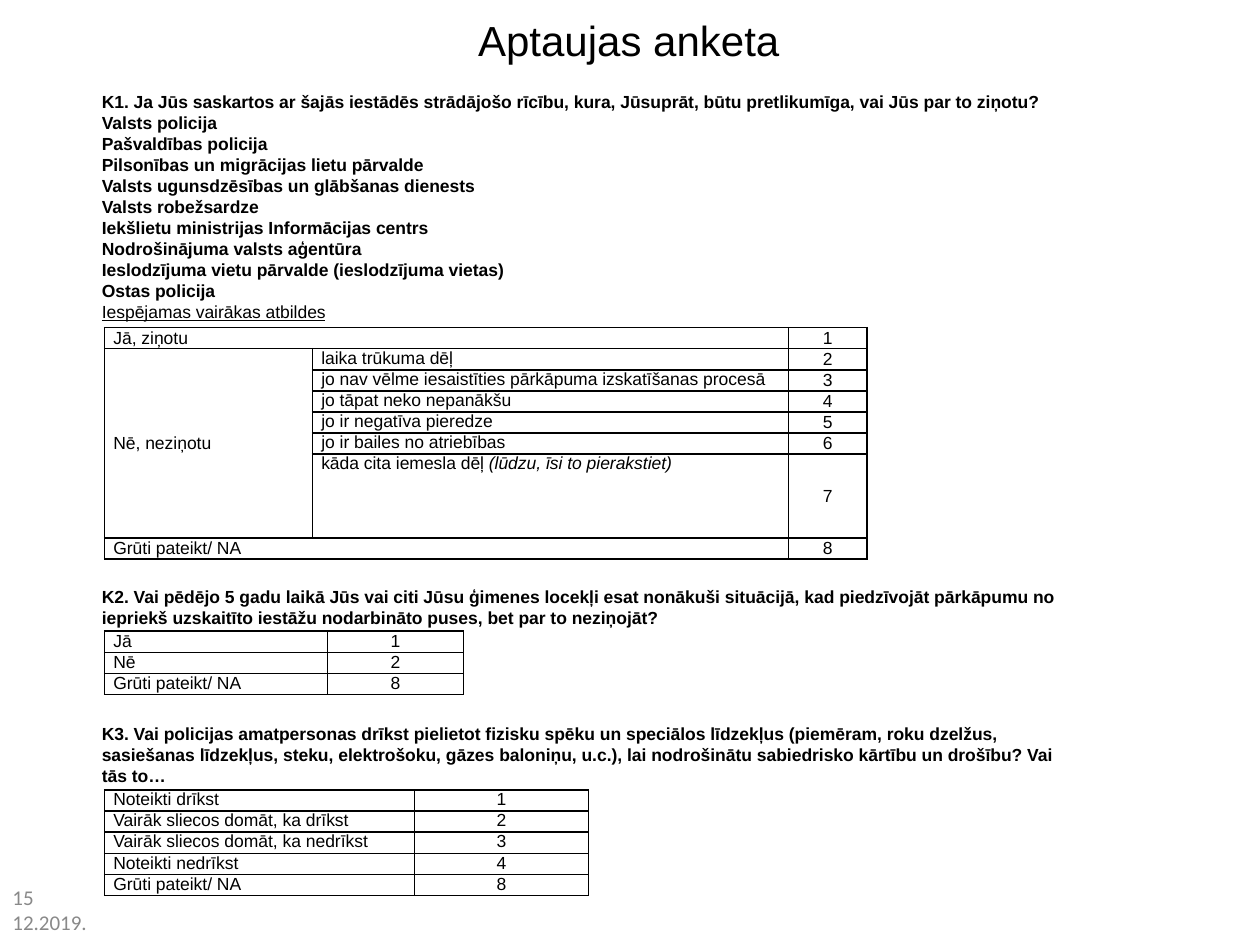
from lxml import etree
from pptx import Presentation
from pptx.enum import text as t
from pptx.dml.color import RGBColor
from pptx.oxml import ns
from pptx.util import Inches, Pt

COLORS = {"text": "000000", "footer": "898989", "border": "000000"}
ROW_HEIGHT = 1 / 6
TABLE_LEFT = 0.83

TITLE = "Aptaujas anketa"
FOOTER = ["15", "12.2019."]
INSTITUTIONS = [
    "Valsts policija",
    "Pašvaldības policija",
    "Pilsonības un migrācijas lietu pārvalde",
    "Valsts ugunsdzēsības un glābšanas dienests",
    "Valsts robežsardze",
    "Iekšlietu ministrijas Informācijas centrs",
    "Nodrošinājuma valsts aģentūra",
    "Ieslodzījuma vietu pārvalde (ieslodzījuma vietas)",
    "Ostas policija",
]
ANSWER_NOTE = ("Iespējamas vairākas atbildes", {"bold": False, "underline": True})

# (left, top, width, height), paragraphs
QUESTIONS = [
    ((0.71, 0.67, 8.03, 1.95), [
        "K1. Ja Jūs saskartos ar šajās iestādēs strādājošo rīcību, kura, Jūsuprāt, "
        "būtu pretlikumīga, vai Jūs par to ziņotu?", *INSTITUTIONS, [ANSWER_NOTE]]),
    ((0.71, 4.6, 8.03, 0.44), [
        "K2. Vai pēdējo 5 gadu laikā Jūs vai citi Jūsu ģimenes locekļi esat nonākuši "
        "situācijā, kad piedzīvojāt pārkāpumu no iepriekš uzskaitīto iestāžu "
        "nodarbināto puses, bet par to neziņojāt?"]),
    ((0.71, 5.69, 7.97, 0.61), [
        "K3. Vai policijas amatpersonas drīkst pielietot fizisku spēku un speciālos "
        "līdzekļus (piemēram, roku dzelžus, sasiešanas līdzekļus, steku, elektrošoku, "
        "gāzes baloniņu, u.c.), lai nodrošinātu sabiedrisko kārtību un drošību? "
        "Vai tās to…"]),
]

OTHER_REASON = [("kāda cita iemesla dēļ ", {}),
                ("(lūdzu, īsi to pierakstiet)", {"italic": True})]
REPORT_ROWS = [
    ("Jā, ziņotu", "", "1"),
    ("Nē, neziņotu", "laika trūkuma dēļ", "2"),
    ("", "jo nav vēlme iesaistīties pārkāpuma izskatīšanas procesā", "3"),
    ("", "jo tāpat neko nepanākšu", "4"),
    ("", "jo ir negatīva pieredze", "5"),
    ("", "jo ir bailes no atriebības", "6"),
    ("", OTHER_REASON, "7"),
    ("Grūti pateikt/ NA", "", "8"),
]
REPORT_MERGES = [((0, 0), (0, 1)), ((1, 0), (6, 0)), ((7, 0), (7, 1))]
EXPERIENCE_ROWS = [("Jā", "1"), ("Nē", "2"), ("Grūti pateikt/ NA", "8")]
FORCE_ROWS = [
    ("Noteikti drīkst", "1"),
    ("Vairāk sliecos domāt, ka drīkst", "2"),
    ("Vairāk sliecos domāt, ka nedrīkst", "3"),
    ("Noteikti nedrīkst", "4"),
    ("Grūti pateikt/ NA", "8"),
]


def write_text(frame, paragraphs, size=10, font="Arial", color="text", bold=False,
               align=t.PP_ALIGN.LEFT):
    """Fill a frame; a paragraph is a string or a list of (text, format) runs."""
    for index, content in enumerate(paragraphs):
        paragraph = frame.paragraphs[0] if index == 0 else frame.add_paragraph()
        paragraph.alignment = align
        for words, style in [(content, {})] if isinstance(content, str) else content:
            run = paragraph.add_run()
            run.text = words
            run.font.name = font
            run.font.size = Pt(size)
            run.font.color.rgb = RGBColor.from_string(COLORS[color])
            run.font.bold = style.get("bold", bold)
            run.font.italic = style.get("italic", False)
            run.font.underline = style.get("underline", False)


def add_text(slide, box, paragraphs, anchor=t.MSO_ANCHOR.TOP, **style):
    frame = slide.shapes.add_textbox(*map(Inches, box)).text_frame
    frame.word_wrap = True
    frame.vertical_anchor = anchor
    write_text(frame, paragraphs, **style)


def add_borders(cell):
    properties = cell._tc.get_or_add_tcPr()
    for index, side in enumerate(("lnL", "lnR", "lnT", "lnB")):
        line = etree.Element(ns.qn("a:" + side), w=str(Pt(1)))
        fill = etree.SubElement(line, ns.qn("a:solidFill"))
        etree.SubElement(fill, ns.qn("a:srgbClr"), val=COLORS["border"])
        properties.insert(index, line)


def add_answers(slide, top, widths, rows, merges=(), middle_columns=(), tall_rows=None):
    """Add an answer table; tall_rows maps a row to its height in text lines."""
    heights = [ROW_HEIGHT * (tall_rows or {}).get(row, 1) for row in range(len(rows))]
    table = slide.shapes.add_table(
        len(rows), len(widths), Inches(TABLE_LEFT), Inches(top),
        Inches(sum(widths)), Inches(sum(heights))).table
    table.first_row = table.horz_banding = False
    for column, width in zip(table.columns, widths):
        column.width = Inches(width)
    for row, height in zip(table.rows, heights):
        row.height = Inches(height)
    for row, values in enumerate(rows):
        for column, value in enumerate(values):
            cell = table.cell(row, column)
            cell.fill.background()
            cell.margin_left = cell.margin_right = Inches(0.07)
            cell.margin_top = cell.margin_bottom = 0
            if column in middle_columns:
                cell.vertical_anchor = t.MSO_ANCHOR.MIDDLE
            is_code = column == len(widths) - 1
            # Empty cells also get a small run, so that the row keeps its height
            write_text(cell.text_frame, [value],
                       align=t.PP_ALIGN.CENTER if is_code else t.PP_ALIGN.LEFT)
            add_borders(cell)
    for first, last in merges:
        table.cell(*first).merge(table.cell(*last))


def main():
    presentation = Presentation()
    presentation.slide_width, presentation.slide_height = Inches(10), Inches(7.5)
    slide = presentation.slides.add_slide(presentation.slide_layouts[6])

    add_text(slide, (0, 6.94, 1.68, 0.56), FOOTER, anchor=t.MSO_ANCHOR.MIDDLE,
             size=12, font="Calibri", color="footer")
    add_text(slide, (1.3, 0, 7.38, 0.63), [TITLE], anchor=t.MSO_ANCHOR.MIDDLE,
             size=24, align=t.PP_ALIGN.CENTER)
    for box, paragraphs in QUESTIONS:
        add_text(slide, box, paragraphs, bold=True)

    add_answers(slide, 2.6, (1.65, 3.78, 0.62), REPORT_ROWS, merges=REPORT_MERGES,
                middle_columns=(0, 2), tall_rows={6: 4})
    add_answers(slide, 5.01, (1.77, 1.08), EXPERIENCE_ROWS)
    add_answers(slide, 6.27, (2.46, 1.38), FORCE_ROWS)
    presentation.save("out.pptx")


if __name__ == "__main__":
    main()
